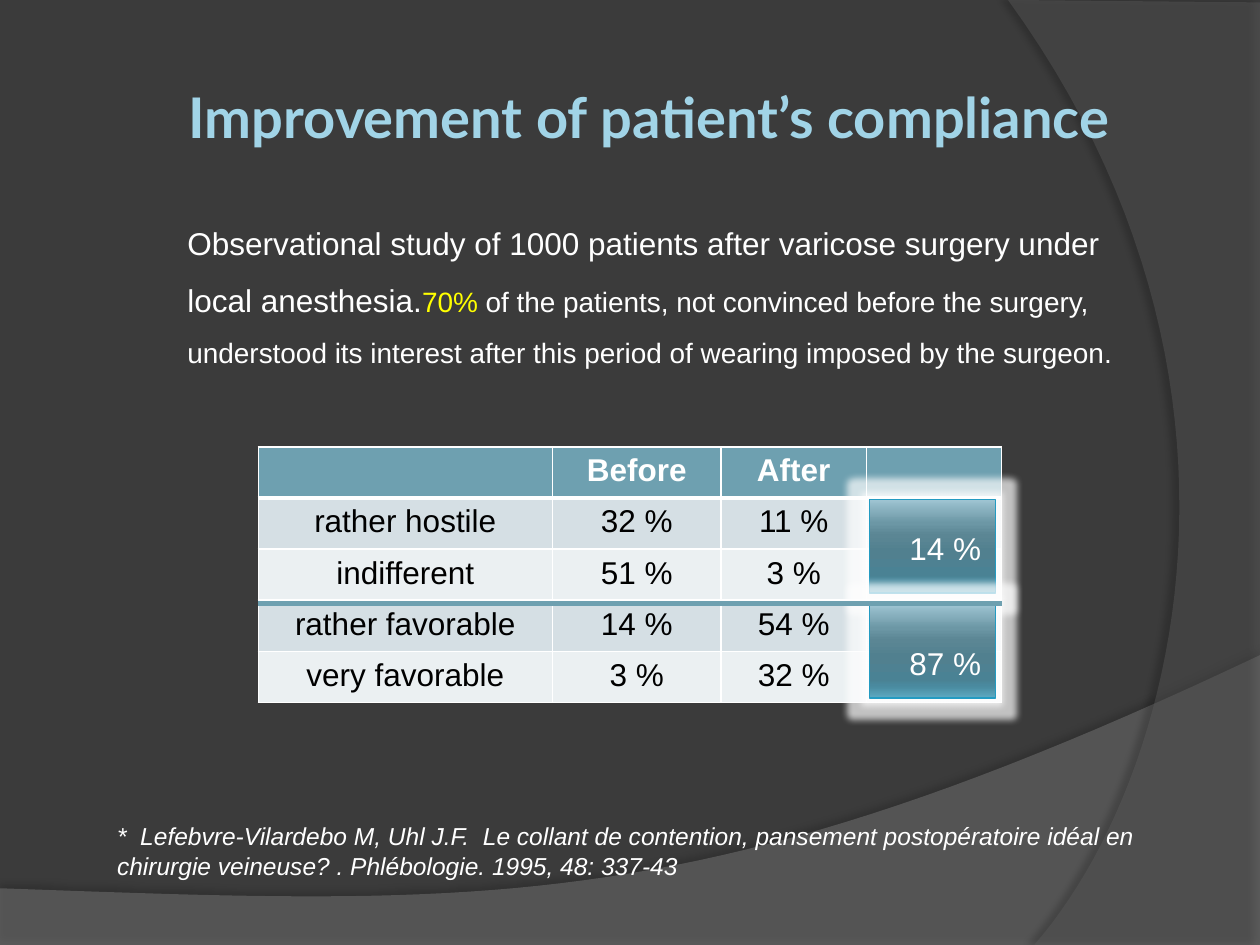
from lxml import etree
from pptx import Presentation, util as u
from pptx.dml.color import RGBColor
from pptx.enum import shapes, text
from pptx.oxml import parse_xml
from pptx.oxml.ns import nsdecls, qn

Pt = u.Pt
CENTER = text.PP_ALIGN.CENTER
WHITE, STEEL, PALE, LIGHT = "FFFFFF", "6EA0B0", "D5DFE4", "EBF0F2"
GLOSS = [(0, "9EC4D2"), (25, "6C97A5"), (38, "5B8694"), (55, "51808F"),
         (80, "4A8294"), (88, "4A8BA0"), (100, "5DAAC2")]


def color(code):
    return RGBColor.from_string(code)


def element(tag, body="", **attributes):
    listed = "".join(f' {name}="{value}"' for name, value in attributes.items())
    return parse_xml(f"<a:{tag} {nsdecls('a')}{listed}>{body}</a:{tag}>")


def tint(code, alpha=100):
    return f'<a:srgbClr val="{code}"><a:alpha val="{alpha * 1000}"/></a:srgbClr>'


def write(paragraph, words, size=18, font="Arial", ink=WHITE, bold=False,
          italic=False, align=None, spacing=None, before=None):
    run = paragraph.add_run()
    run.text = words
    run.font.size, run.font.name = Pt(size), font
    run.font.bold, run.font.italic = bold, italic
    run.font.color.rgb = color(ink)
    if align is not None:
        paragraph.alignment = align
    if spacing is not None:
        paragraph.line_spacing = spacing
    if before is not None:
        paragraph.space_before = Pt(before)


def bezier(start, first, second, end, steps=48):
    for step in range(1, steps + 1):
        t = step / steps
        weights = ((1 - t) ** 3, 3 * t * (1 - t) ** 2, 3 * t * t * (1 - t), t ** 3)
        yield tuple(sum(w * p[axis] for w, p in zip(weights, (start, first, second, end)))
                    for axis in (0, 1))


class Deck:
    """Holds the style and the current slide, and draws each kind of element."""

    def __init__(self, background):
        self.show = Presentation()
        self.show.slide_width, self.show.slide_height = Pt(720), Pt(540)
        self.slide = self.show.slides.add_slide(self.show.slide_layouts[6])
        self.slide.background.fill.solid()
        self.slide.background.fill.fore_color.rgb = color(background)

    def wave(self, points, fill, alpha, shade, distance, angle):
        corners = [(Pt(x), Pt(y)) for x, y in points]
        builder = self.slide.shapes.build_freeform(*corners[0], scale=1.0)
        builder.add_line_segments(corners[1:], close=True)
        wave = builder.convert_to_shape()
        wave.line.fill.background()
        wave.fill.solid()
        wave.fill.fore_color.rgb = color(fill)
        swatch = wave.fill._xPr.find(qn("a:solidFill"))[0]
        swatch.append(element("alpha", val=alpha * 1000))
        self.effect(wave, element("outerShdw", tint("000000", shade), blurRad=Pt(4),
                                  dist=Pt(distance), dir=angle * 60000, rotWithShape=0))

    def effect(self, shape, effect):
        shape.shadow.inherit = False
        shape._element.spPr.find(qn("a:effectLst")).append(effect)

    def textbox(self, left, top, width, height, wrap=True, inset=None, anchor=None):
        frame = self.slide.shapes.add_textbox(Pt(left), Pt(top), Pt(width), Pt(height)).text_frame
        frame.word_wrap = wrap
        if inset is not None:
            frame.margin_left = frame.margin_right = Pt(inset)
            frame.margin_top = frame.margin_bottom = Pt(inset)
        if anchor is not None:
            frame.vertical_anchor = anchor
        return frame

    def table(self, left, top, columns, row_height, rows):
        size = Pt(sum(columns)), Pt(row_height * len(rows))
        grid = self.slide.shapes.add_table(len(rows), len(columns), Pt(left), Pt(top), *size).table
        for column, width in zip(grid.columns, columns):
            column.width = Pt(width)
        for r, row in enumerate(rows):
            grid.rows[r].height = Pt(row_height)
            for c, words in enumerate(row):
                self.cell(grid.cell(r, c), words, r)

    def cell(self, cell, words, row):
        header = row == 0
        widths = {"lnL": 1, "lnR": 1, "lnT": 3 if row == 1 else 1, "lnB": 3 if header else 1}
        for side, width in widths.items():
            cell._tc.get_or_add_tcPr().append(
                element(side, f"<a:solidFill>{tint(WHITE)}</a:solidFill>", w=Pt(width)))
        cell.fill.solid()
        cell.fill.fore_color.rgb = color(STEEL if header else PALE if row % 2 else LIGHT)
        if words:
            write(cell.text_frame.paragraphs[0], words, bold=header,
                  ink=WHITE if header else "000000", align=CENTER)

    def glossy_box(self, left, top, width, height):
        box = self.slide.shapes.add_shape(shapes.MSO_SHAPE.RECTANGLE,
                                          Pt(left), Pt(top), Pt(width), Pt(height))
        box.line.color.rgb = color("239BC2")
        box.line.width = Pt(0.75)
        box.fill.gradient()
        box.fill.gradient_angle = 270
        stops = box.fill._xPr.find(qn("a:gradFill")).find(qn("a:gsLst"))
        for stop in list(stops):
            stops.remove(stop)
        for place, code in GLOSS:
            stops.append(element("gs", tint(code), pos=place * 1000))
        self.effect(box, element("glow", tint(WHITE, 70), rad=Pt(8)))

    def rule(self, left, y, right, ink, width):
        rule = self.slide.shapes.add_connector(shapes.MSO_CONNECTOR.STRAIGHT,
                                               Pt(left), Pt(y), Pt(right), Pt(y))
        rule.line.color.rgb = color(ink)
        rule.line.width = Pt(width)
        etree.SubElement(rule._element.spPr, qn("a:effectLst"))


def main():
    deck = Deck("3B3B3B")
    crest, shore = (720, 374.4), (0, 507.6)
    deck.wave([(0, 540), (720, 540), crest,
               *bezier(crest, (402.5, 524.9), (281.5, 517.7), shore)],
              "7F7F7F", 45, 35, 3.5, 270)
    foot, peak = (591, 540), (576, 0)
    deck.wave([(720, 1.4), (720, 540), foot,
               *bezier(foot, (673.2, 445.7), (733, 216), peak)],
              "5E5E5E", 40, 45, 4, 180)

    title = deck.textbox(36, 21.6, 670.3, 90, inset=3.6, anchor=text.MSO_ANCHOR.MIDDLE)
    write(title.paragraphs[0], "Improvement of patient’s compliance",
          size=32, font="Lato", ink="A1D4E7", bold=True, align=CENTER)

    study = deck.textbox(100, 113.8, 573.8, 98).paragraphs[0]
    write(study, "Observational study of 1000 patients after varicose surgery under "
                 "local anesthesia.", spacing=1.5)
    write(study, "70%", size=16, ink="FFFF00")
    write(study, " of the patients, not convinced before the surgery, understood its interest "
                 "after this period of wearing imposed by the surgeon.", size=16)

    reference = deck.textbox(59.8, 465.8, 622.8, 41)
    write(reference.paragraphs[0],
          "*  Lefebvre-Vilardebo M, Uhl J.F.  Le collant de contention, pansement "
          "postopératoire idéal en chirurgie veineuse? . Phlébologie. 1995, 48: 337-43",
          size=14, italic=True)

    deck.table(147.6, 255.4, [168, 96.5, 83, 77.3], 29.2, [
        ("", "Before", "After", ""),
        ("rather hostile", "32 %", "11 %", ""),
        ("indifferent", "51 %", "3 %", ""),
        ("rather favorable", "14 %", "54 %", ""),
        ("very favorable", "3 %", "32 %", ""),
    ])
    for top in (285.6, 345.6):
        deck.glossy_box(496.8, top, 72, 53.3)
    totals = deck.textbox(512.6, 288, 56.2, 101.5, wrap=False)
    write(totals.paragraphs[0], "14 %", spacing=1.5)
    write(totals.add_paragraph(), "87 %", spacing=1.5, before=33)
    deck.rule(147.6, 344.8, 572.4, STEEL, 3)
    deck.show.save("out.pptx")


if __name__ == "__main__":
    main()
